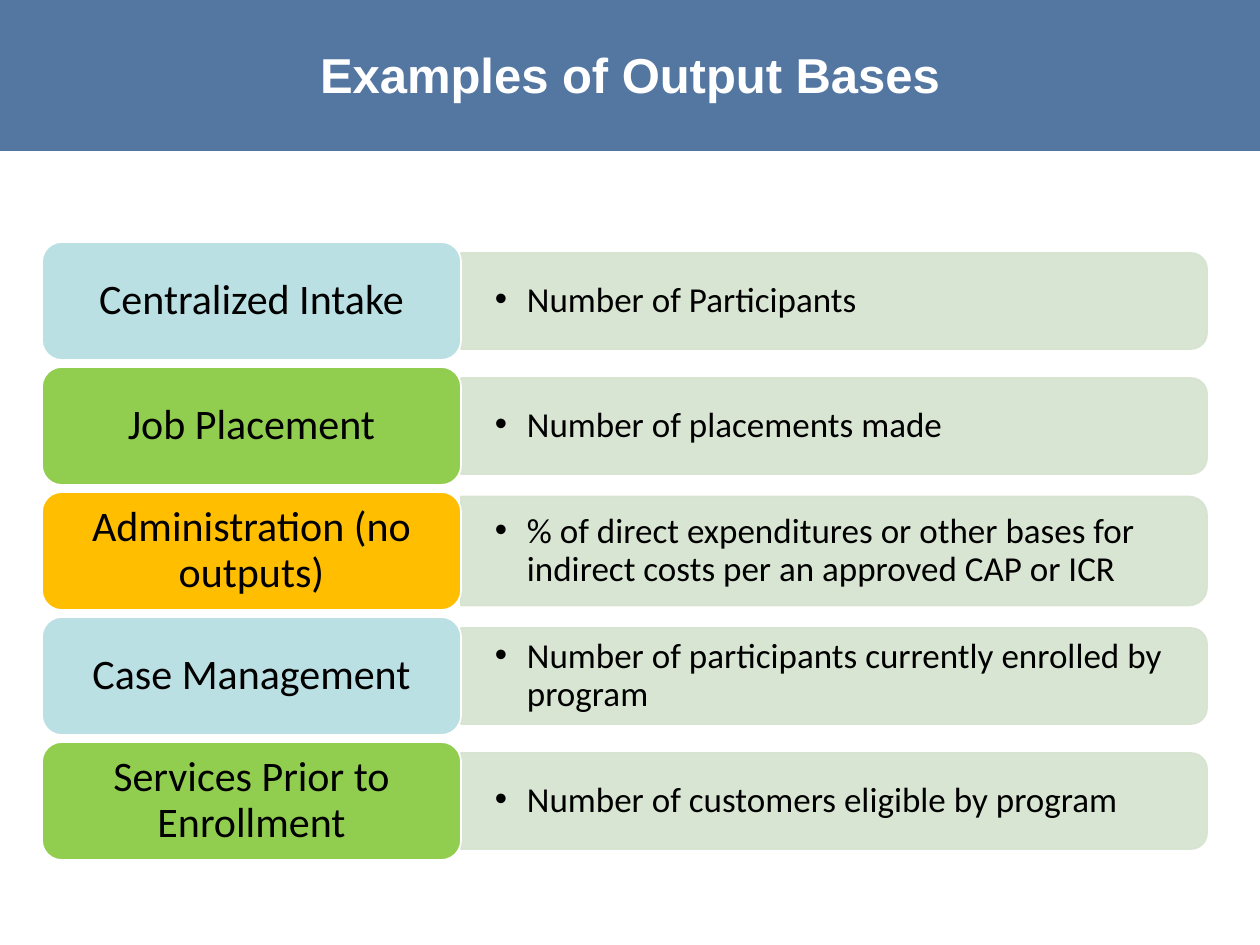
"""Build the slide that pairs each cost activity with its output base."""
from dataclasses import dataclass

from lxml.etree import SubElement
from pptx import Presentation
from pptx.dml.color import RGBColor
from pptx.enum.shapes import MSO_SHAPE
from pptx.enum.text import MSO_ANCHOR, PP_ALIGN
from pptx.oxml.ns import qn
from pptx.util import Emu, Pt


@dataclass(frozen=True)
class Theme:
    banner: str = "376092"
    bar: str = "D5E3CF"
    blue: str = "BBE0E3"
    green: str = "91CE4F"
    gold: str = "FFBE00"
    white: str = "FFFFFF"
    black: str = "000000"
    title_font: str = "Arial"
    body_font: str = "Calibri"
    title_size: int = 28
    label_size: int = 24
    base_size: int = 20


THEME = Theme()
TITLE = "Examples of Output Bases"
ROWS = [
    ("Centralized Intake", "Number of Participants", THEME.blue, 96),
    ("Job Placement", "Number of placements made", THEME.green, 96),
    ("Administration (no outputs)",
     "% of direct expenditures or other bases for indirect costs per an approved CAP or ICR",
     THEME.gold, 109),
    ("Case Management", "Number of participants currently enrolled by program", THEME.blue, 96),
    ("Services Prior to Enrollment", "Number of customers eligible by program", THEME.green, 96),
]
PAGE_WIDTH, PAGE_HEIGHT, BANNER_HEIGHT = 1260, 945, 151
LABEL_LEFT, LABEL_WIDTH, LABEL_HEIGHT = 42, 419, 118
BAR_LEFT, BAR_WIDTH, BASE_WIDTH = 461, 746, 741
FIRST_MIDDLE, ROW_PITCH = 301, 125
BULLET_INDENT = 32


def px(count):
    return Emu(round(count * 914400 / 126))


def set_all(target, values):
    for name, value in values.items():
        setattr(target, name, value)


def paint(color_format, color, opacity):
    color_format.rgb = RGBColor.from_string(color)
    if opacity < 100:
        node = color_format._xFill.find(qn("a:srgbClr"))
        SubElement(node, qn("a:alpha"), val=str(opacity * 1000))


def add_panel(page, kind, place, fill, line=None, opacity=100):
    panel = page.shapes.add_shape(kind, *map(px, place))
    panel.shadow.inherit = False
    panel.fill.solid()
    paint(panel.fill.fore_color, fill, opacity)
    if line:
        panel.line.width = Pt(1)
        panel.line.fill.solid()
        paint(panel.line.fill.fore_color, line, opacity)
    else:
        panel.line.fill.background()
    return panel


def write(box, text, font, size, color, bold=False, align=PP_ALIGN.CENTER,
          spacing=0.9, bullet=False):
    frame = box.text_frame
    set_all(frame, {"word_wrap": True, "vertical_anchor": MSO_ANCHOR.MIDDLE})
    para = frame.paragraphs[0]
    if bullet:
        set_all(frame, {"margin_left": px(34), "margin_right": px(34),
                        "margin_top": px(18), "margin_bottom": px(18)})
        settings = para._p.get_or_add_pPr()
        settings.set("marL", str(px(BULLET_INDENT)))
        settings.set("indent", str(-px(BULLET_INDENT)))
        SubElement(settings, qn("a:buFont"), typeface="Arial")
        SubElement(settings, qn("a:buChar"), char="•")
    set_all(para, {"alignment": align, "line_spacing": spacing})
    span = para.add_run()
    span.text = text
    set_all(span.font, {"name": font, "size": Pt(size), "bold": bold})
    span.font.color.rgb = RGBColor.from_string(color)


def add_row(page, index, label, base, color, height):
    middle = FIRST_MIDDLE + index * ROW_PITCH
    bar_place = (BAR_LEFT + (BAR_WIDTH - height) / 2, middle - BAR_WIDTH / 2, height, BAR_WIDTH)
    bar = add_panel(page, MSO_SHAPE.ROUND_2_SAME_RECTANGLE, bar_place,
                    THEME.bar, THEME.bar, 90)
    bar.rotation = 90
    base_height = height - 10
    base_place = (BAR_LEFT, middle - base_height / 2, BASE_WIDTH, base_height)
    base_box = page.shapes.add_textbox(*map(px, base_place))
    write(base_box, base, THEME.body_font, THEME.base_size, THEME.black,
          align=PP_ALIGN.LEFT, bullet=True)
    label_place = (LABEL_LEFT, middle - LABEL_HEIGHT / 2, LABEL_WIDTH, LABEL_HEIGHT)
    label_box = add_panel(page, MSO_SHAPE.ROUNDED_RECTANGLE, label_place, color, THEME.white)
    write(label_box, label, THEME.body_font, THEME.label_size, THEME.black)


def main():
    deck = Presentation()
    set_all(deck, {"slide_width": px(PAGE_WIDTH), "slide_height": px(PAGE_HEIGHT)})
    page = deck.slides.add_slide(deck.slide_layouts[6])
    add_panel(page, MSO_SHAPE.RECTANGLE, (0, 0, PAGE_WIDTH, BANNER_HEIGHT),
              THEME.banner, opacity=85)
    title_box = page.shapes.add_textbox(*map(px, (0, 0, PAGE_WIDTH, 148)))
    write(title_box, TITLE, THEME.title_font, THEME.title_size, THEME.white,
          bold=True, spacing=1.0)
    for index, row in enumerate(ROWS):
        add_row(page, index, *row)
    deck.save("out.pptx")


if __name__ == "__main__":
    main()
